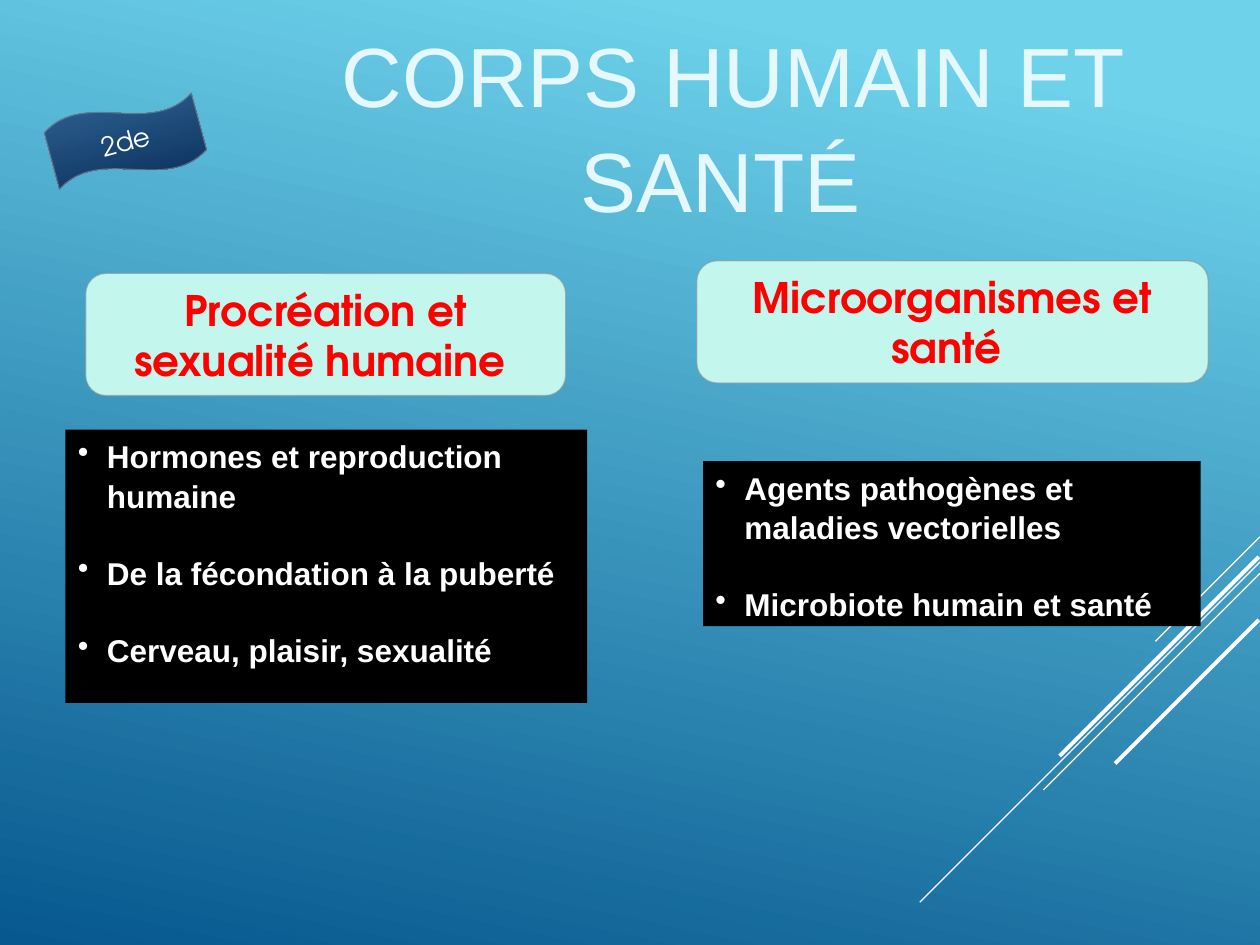
from lxml.etree import SubElement
from pptx import Presentation
from pptx.dml.color import RGBColor
from pptx.enum.shapes import MSO_CONNECTOR, MSO_SHAPE
from pptx.enum.text import MSO_ANCHOR, MSO_AUTO_SIZE, PP_ALIGN
from pptx.oxml.ns import qn
from pptx.util import Inches, Pt

TITLE = "CORPS HUMAIN ET SANTÉ "
LEVEL = "2de"
THEMES = [
    {
        "heading": "Procréation et sexualité humaine ",
        "heading_box": (0.68, 2.17, 3.81, 0.97),
        "topics": ["Hormones et reproduction humaine",
                   "De la fécondation à la puberté",
                   "Cerveau, plaisir, sexualité"],
        "topics_box": (0.52, 3.41, 4.14, 2.17),
    },
    {
        "heading": "Microorganismes et santé ",
        "heading_box": (5.53, 2.07, 4.06, 0.97),
        "topics": ["Agents pathogènes et maladies vectorielles",
                   "Microbiote humain et santé"],
        "topics_box": (5.58, 3.66, 3.95, 1.31),
    },
]
DIAGONALS = [
    (10, 4.26, 0.83, 0.75),
    (10, 4.46, 2.7, 0.75),
    (10, 4.55, 1.72, 0.75),
    (9.99, 4.42, 1.58, 2.25),
    (9.99, 4.92, 1.14, 2.25),
]
HEADING_FONT = "TeX Gyre Adventor"
BODY_FONT = "Arial"
HANGING = 0.23


def rgb(value):
    return RGBColor.from_string(value)


def paint_gradient(fill, colours, first, angle):
    fill.gradient()
    fill.gradient_angle = 360 - angle
    for stop, colour, position in zip(fill.gradient_stops, colours, (first, 1)):
        stop.color.rgb = rgb(colour)
        stop.position = position


def style(paragraph, font_name, size, colour, bold=False):
    font = paragraph.font
    font.name, font.size, font.bold = font_name, Pt(size), bold
    font.color.rgb = rgb(colour)


def add_box(slide, preset, box, fill=None):
    shape = slide.shapes.add_shape(preset, *map(Inches, box))
    shape.shadow.inherit = False
    shape.text_frame.word_wrap = True
    if fill:
        shape.fill.solid()
        shape.fill.fore_color.rgb = rgb(fill)
    return shape


def add_label(shape, text, size, colour, bold=False):
    shape.line.color.rgb = rgb("89919C")
    shape.line.width = Pt(0.75)
    line_colour = shape.line._ln.find(".//" + qn("a:srgbClr"))
    SubElement(line_colour, qn("a:alpha"), val="60000")
    shape.text_frame.vertical_anchor = MSO_ANCHOR.MIDDLE
    paragraph = shape.text_frame.paragraphs[0]
    paragraph.text = text
    paragraph.alignment = PP_ALIGN.CENTER
    style(paragraph, HEADING_FONT, size, colour, bold)


def add_topics(slide, topics, box):
    shape = add_box(slide, MSO_SHAPE.RECTANGLE, box, "000000")
    shape.line.fill.background()
    frame = shape.text_frame
    frame.vertical_anchor = MSO_ANCHOR.TOP
    for index, topic in enumerate(topics):
        paragraph = frame.add_paragraph() if index else frame.paragraphs[0]
        paragraph.text = topic
        paragraph.alignment = PP_ALIGN.LEFT
        paragraph.line_spacing = 1.04
        paragraph.space_before = Pt(21.6 if index else 0)
        style(paragraph, BODY_FONT, 18, "FFFFFF", True)
        properties = paragraph._p.get_or_add_pPr()
        properties.set("marL", str(Inches(HANGING)))
        properties.set("indent", str(-Inches(HANGING)))
        bullet = properties.makeelement(qn("a:buChar"), {"char": "•"})
        properties.find(qn("a:defRPr")).addprevious(bullet)


def add_diagonal(slide, right, top, run, width):
    ends = (right, top, right - run, top + run)
    diagonal = slide.shapes.add_connector(MSO_CONNECTOR.STRAIGHT, *map(Inches, ends))
    diagonal.line.color.rgb = rgb("FFFFFF")
    diagonal.line.width = Pt(width)
    SubElement(diagonal._element.spPr, qn("a:effectLst"))


def add_title(slide):
    title = slide.shapes.title
    title.left, title.top, title.width, title.height = map(Inches, (2.58, 0.67, 6.47, 0.64))
    frame = title.text_frame
    frame.word_wrap = True
    frame.auto_size = MSO_AUTO_SIZE.NONE
    frame.vertical_anchor = MSO_ANCHOR.MIDDLE
    paragraph = frame.paragraphs[0]
    paragraph.text = TITLE
    paragraph.alignment = PP_ALIGN.CENTER
    paragraph.line_spacing = 1.04
    style(paragraph, BODY_FONT, 48, "E4F8FD")


def main():
    deck = Presentation()
    deck.slide_width, deck.slide_height = Inches(10), Inches(7.5)
    slide = deck.slides.add_slide(deck.slide_layouts[5])
    paint_gradient(slide.background.fill, ("6ED2EB", "06588E"), 0.1, 102)
    add_title(slide)
    for diagonal in DIAGONALS:
        add_diagonal(slide, *diagonal)

    banner = add_box(slide, MSO_SHAPE.WAVE, (0.39, 0.81, 1.21, 0.62))
    banner.rotation = 344.9
    paint_gradient(banner.fill, ("35699B", "042853"), 0, 90)
    add_label(banner, LEVEL, 15, "FFFFFF")

    for theme in THEMES:
        heading = add_box(slide, MSO_SHAPE.ROUNDED_RECTANGLE, theme["heading_box"], "C3F7ED")
        add_label(heading, theme["heading"], 24, "FF0000", True)
        add_topics(slide, theme["topics"], theme["topics_box"])

    deck.save("out.pptx")


if __name__ == "__main__":
    main()
